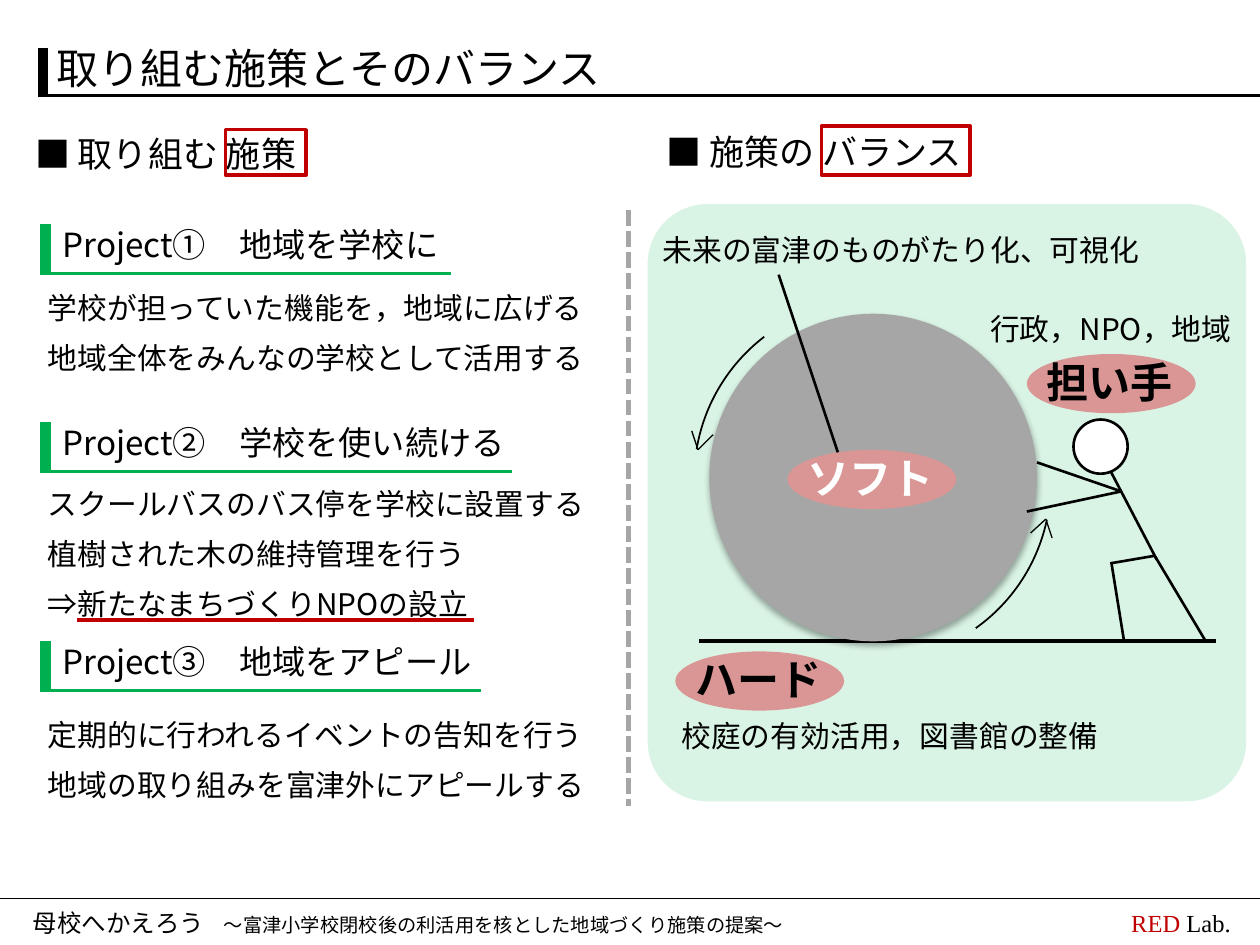
from lxml import etree
from pptx import Presentation
from pptx.dml.color import RGBColor
from pptx.enum.dml import MSO_LINE
from pptx.enum.shapes import MSO_CONNECTOR, MSO_SHAPE
from pptx.oxml.ns import qn
from pptx.util import Inches, Pt

STRAIGHT = MSO_CONNECTOR.STRAIGHT
ELLIPSE, RECT, ARC = MSO_SHAPE.OVAL, MSO_SHAPE.RECTANGLE, MSO_SHAPE.ARC
ROUND_RECT = MSO_SHAPE.ROUNDED_RECTANGLE
DASH = MSO_LINE.SQUARE_DOT
GOTHIC, SERIF = "Noto Sans CJK JP", "Times New Roman"
BLACK, WHITE, GREY = "000000", "FFFFFF", "A6A6A6"
RED, GREEN, PINK = "C00000", "00B050", "D99694"


def rgb(color):
    return RGBColor.from_string(color)


def add_line(s, x1, y1, x2, y2, width=1.5, color=BLACK, dash=None):
    c = s.shapes.add_connector(STRAIGHT, Inches(x1), Inches(y1), Inches(x2), Inches(y2))
    c.line.width = Pt(width)
    c.line.color.rgb = rgb(color)
    if dash is not None:
        c.line.dash_style = dash
    etree.SubElement(c._element.spPr, qn("a:effectLst"))


def add_shape(s, kind, x, y, w, h, fill=None, line=None, width=1.5):
    sp = s.shapes.add_shape(kind, Inches(x), Inches(y), Inches(w), Inches(h))
    sp.shadow.inherit = False
    if fill:
        sp.fill.solid()
        sp.fill.fore_color.rgb = rgb(fill)
    else:
        sp.fill.background()
    if line:
        sp.line.color.rgb = rgb(line)
        sp.line.width = Pt(width)
    else:
        sp.line.fill.background()
    return sp


def add_run(p, text, size, color=BLACK, bold=False, font=GOTHIC):
    r = p.add_run()
    r.text = text
    r.font.size = Pt(size)
    r.font.bold = bold
    r.font.name = font
    r.font.color.rgb = rgb(color)
    etree.SubElement(r._r.get_or_add_rPr(), qn("a:ea"), typeface=font)


def add_text(s, x, y, w, h, lines, size, color=BLACK, bold=False, after=0):
    tf = s.shapes.add_textbox(Inches(x), Inches(y), Inches(w), Inches(h)).text_frame
    tf.word_wrap = True
    for i, line in enumerate(lines):
        p = tf.add_paragraph() if i else tf.paragraphs[0]
        p.space_after = Pt(after)
        add_run(p, line, size, color, bold)
    return tf


def add_title(s, x, y, text):
    add_line(s, x, y + 0.47, 10, y + 0.47)
    add_line(s, x + 0.04, y + 0.47, x + 0.04, y + 0.09, 6)
    add_text(s, x + 0.05, y, 4.58, 0.5, [text], 24)


def add_footer(s, y):
    add_line(s, 0, y, 10, y, 1)
    tf = add_text(s, 0.16, y + 0.03, 6.6, 0.34, ["母校へかえろう"], 14)
    add_run(tf.paragraphs[0], "　～富津小学校閉校後の利活用を核とした地域づくり施策の提案～", 11)
    p = add_text(s, 8.88, y + 0.03, 1.1, 0.34, [], 14).paragraphs[0]
    add_run(p, "RED ", 14, RED, font=SERIF)
    add_run(p, "Lab.", 14, font=SERIF)


def add_heading(s, x, y, w, text, frame):
    add_text(s, x, y, w, 0.44, [text], 20)
    add_shape(s, RECT, *frame, line=RED, width=2)


def add_project(s, x, y, w, title, body_y, body):
    # Green bar and underline, heading, then body lines
    add_line(s, x, y + 0.44, x + w, y + 0.44, 1.5, GREEN)
    add_line(s, x + 0.04, y + 0.45, x + 0.04, y + 0.05, 6, GREEN)
    add_text(s, x + 0.08, y, w + 0.1, 0.42, [title], 19)
    add_text(s, x - 0.04, body_y, 4.49, 0.4 * len(body), body, 17, after=8)


def add_label(s, x, y, text, color=BLACK):
    add_shape(s, ELLIPSE, x, y, 1.34, 0.47, PINK)
    add_text(s, x + 0.06, y - 0.03, 1.23, 0.5, [text], 24, color, True)


def add_ball(s, x, y, size):
    ball = add_shape(s, ELLIPSE, x, y, size, size, GREY)
    effects = ball._element.spPr.find(qn("a:effectLst"))
    shadow = etree.SubElement(effects, qn("a:outerShdw"), blurRad=str(Pt(3.5)),
                              dist=str(Pt(2.2)), dir="5400000", rotWithShape="0")
    black = etree.SubElement(shadow, qn("a:srgbClr"), val=BLACK)
    etree.SubElement(black, qn("a:alpha"), val="32000")


def add_person(s, x, y):
    add_shape(s, ELLIPSE, x + 0.37, y, 0.43, 0.43, WHITE, BLACK)
    limbs = [
        (0.67, 0.42, 1.03, 1.11),  # back
        (0, 0.73, 0.75, 0.57), (0.08, 0.34, 0.75, 0.57),  # arms
        (0.67, 1.14, 1.02, 1.08), (0.67, 1.13, 0.77, 1.75),  # front leg
        (1.02, 1.09, 1.42, 1.76),  # rear leg
    ]
    for x1, y1, x2, y2 in limbs:
        add_line(s, x + x1, y + y1, x + x2, y + y2)


def add_turn_arrow(s, cx, cy, start, end, tip, barbs):
    radius = 1.42
    arc = add_shape(s, ARC, cx - radius, cy - radius, 2 * radius, 2 * radius,
                    line=BLACK, width=1)
    # Angles are stored in 1/60000 degree, adjustments in 1/100000
    for i, angle in enumerate((start, end)):
        arc.adjustments[i] = angle * 0.6
    for barb in barbs:
        add_line(s, *tip, *barb, 0.75)


def add_balance(s, x, y, w, h):
    panel = add_shape(s, ROUND_RECT, x, y, w, h, GREEN)
    panel.adjustments[0] = 0.1
    color = panel._element.spPr.find(qn("a:solidFill"))[0]
    etree.SubElement(color, qn("a:alpha"), val="15000")
    # Ground, ball and the person pushing it
    add_line(s, x + 0.41, y + 3.47, x + 4.51, y + 3.47, 2.25)
    add_ball(s, x + 0.49, y + 0.87, 2.6)
    add_person(s, x + 3.01, y + 1.71)
    add_label(s, x + 1.11, y + 1.95, "ソフト", WHITE)
    add_label(s, x + 0.22, y + 3.55, "ハード")
    add_label(s, x + 3.01, y + 1.19, "担い手")
    # Captions
    for dx, dy, width, text in [(0.17, 4.03, 3.54, "校庭の有効活用，図書館の整備"),
                                (2.62, 0.8, 2.2, "行政，NPO，地域"),
                                (0.02, 0.17, 4.02, "未来の富津のものがたり化、可視化")]:
        add_text(s, x + dx, y + dy, width, 0.39, [text], 17, after=8)
    add_line(s, x + 1.51, y + 1.97, x + 1.04, y + 0.56)
    # Rolling direction
    for dx, dy, start, end, tip, barbs in [
            (1.79, 2.18, 189.5, 232.5, (0.4, 1.95), [(0.35, 1.8), (0.52, 1.83)]),
            (1.78, 2.21, 12, 54.5, (3.16, 2.5), [(3.21, 2.65), (3.04, 2.61)])]:
        add_turn_arrow(s, x + dx, y + dy, start, end, (x + tip[0], y + tip[1]),
                       [(x + bx, y + by) for bx, by in barbs])


def main():
    prs = Presentation()
    prs.slide_width, prs.slide_height = Inches(10), Inches(7.5)
    s = prs.slides.add_slide(prs.slide_layouts[6])
    add_footer(s, 7.13)
    add_title(s, 0.3, 0.29, "取り組む施策とそのバランス")
    add_line(s, 4.99, 1.67, 4.99, 6.4, 3, GREY, DASH)
    add_balance(s, 5.14, 1.62, 4.75, 4.74)
    add_heading(s, 5.19, 0.99, 2.91, "■ 施策の バランス", (6.52, 1, 1.18, 0.39))
    add_heading(s, 0.18, 1, 2.63, "■ 取り組む 施策", (1.79, 1.03, 0.64, 0.36))
    projects = [
        (1.73, 3.26, "Project①　地域を学校に", 2.25,
         ["学校が担っていた機能を，地域に広げる", "地域全体をみんなの学校として活用する"]),
        (3.3, 3.74, "Project②　学校を使い続ける", 3.81,
         ["スクールバスのバス停を学校に設置する", "植樹された木の維持管理を行う",
          "⇒新たなまちづくりNPOの設立"]),
        (5.04, 3.5, "Project③　地域をアピール", 5.64,
         ["定期的に行われるイベントの告知を行う", "地域の取り組みを富津外にアピールする"]),
    ]
    for y, w, title, body_y, body in projects:
        add_project(s, 0.32, y, w, title, body_y, body)
    # Emphasis under the last line of the second project
    add_line(s, 0.61, 4.92, 3.76, 4.92, 2.25, RED)
    prs.save("out.pptx")


if __name__ == "__main__":
    main()
